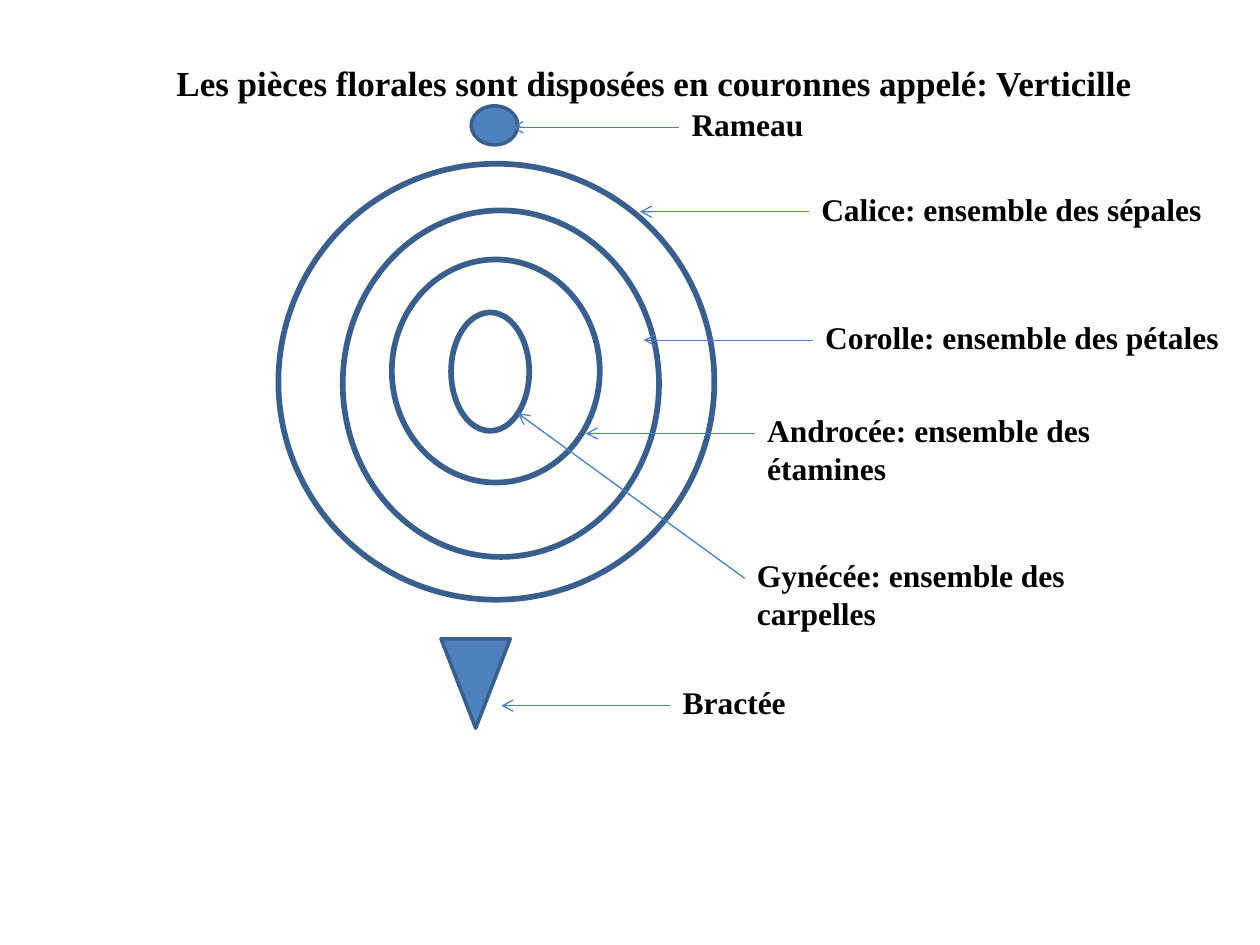
"""Build a slide showing the whorls of a flower as a labelled floral diagram."""
from lxml import etree
from pptx import Presentation
from pptx import util as u
from pptx.dml.color import RGBColor
from pptx.enum import shapes, text
from pptx.oxml.ns import qn

COLORS = {"text": "000000", "fill": "4F81BD", "outline": "3A5F8C", "arrow": "4B7EBC"}
FONT = {"name": "Times New Roman", "bold": True}
FRAME = {"word_wrap": True, "auto_size": text.MSO_AUTO_SIZE.NONE,
         "vertical_anchor": text.MSO_ANCHOR.TOP}
OVAL = shapes.MSO_SHAPE.OVAL
TRIANGLE = shapes.MSO_SHAPE.ISOSCELES_TRIANGLE


def write(sp, content, size, align):
    tf = sp.text_frame
    for key, value in FRAME.items():
        setattr(tf, key, value)
    p = tf.paragraphs[0]
    p.alignment = align
    r = p.add_run()
    r.text = content
    for key, value in {**FONT, "size": u.Pt(size)}.items():
        setattr(r.font, key, value)
    r.font.color.rgb = RGBColor.from_string(COLORS["text"])


def draw(s, kind, box, width, filled, rotation=0):
    sp = s.shapes.add_shape(kind, *map(u.Inches, box))
    sp.shadow.inherit = False
    sp.rotation = rotation
    if filled:
        sp.fill.solid()
        sp.fill.fore_color.rgb = RGBColor.from_string(COLORS["fill"])
    else:
        sp.fill.background()
    sp.line.color.rgb = RGBColor.from_string(COLORS["outline"])
    sp.line.width = u.Pt(width)


prs = Presentation()
prs.slide_width, prs.slide_height = u.Inches(10), u.Inches(7.5)
s = prs.slides.add_slide(prs.slide_layouts[5])

title = s.shapes.title
place = {"left": 1.3, "top": 0.44, "width": 7.95, "height": 0.44}
for key, value in place.items():
    setattr(title, key, u.Inches(value))
write(title, "Les pièces florales sont disposées en couronnes appelé: Verticille",
      20, text.PP_ALIGN.JUSTIFY)

whorls = [
    (2.21, 1.3, 3.46, 3.46),
    (2.72, 1.67, 2.51, 2.75),
    (3.11, 2.06, 1.65, 1.77),
    (3.58, 2.48, 0.62, 0.94),
]
for box in whorls:
    draw(s, OVAL, box, 3.25, False)
draw(s, OVAL, (3.74, 0.84, 0.37, 0.31), 2, True)
draw(s, TRIANGLE, (3.5, 5.07, 0.55, 0.71), 2, True, 180)

labels = [
    ("Rameau", 5.39, 1.01, 3.23, 1, (4.06, 1.01)),
    ("Calice: ensemble des sépales", 6.42, 1.68, 3.23, 1, (5.08, 1.68)),
    ("Corolle: ensemble des pétales", 6.45, 2.7, 3.43, 1, (5.11, 2.7)),
    ("Androcée: ensemble des étamines", 5.99, 3.44, 3.65, 2, (4.65, 3.44)),
    ("Gynécée: ensemble des carpelles", 5.91, 4.59, 3.23, 2, (4.11, 3.28)),
    ("Bractée", 5.32, 5.6, 3.23, 1, (3.98, 5.6)),
]
for content, x, y, width, lines, tip in labels:
    height = 0.45 if lines == 1 else 0.71
    sp = s.shapes.add_textbox(*map(u.Inches, (x, y - 0.225, width, height)))
    write(sp, content, 18, text.PP_ALIGN.LEFT)
    arrow = s.shapes.add_connector(shapes.MSO_CONNECTOR.STRAIGHT,
                                   *map(u.Inches, (x, y, *tip)))
    if lines == 1:
        arrow.begin_connect(sp, 1)
    arrow.line.color.rgb = RGBColor.from_string(COLORS["arrow"])
    arrow.line.width = u.Pt(0.75)
    etree.SubElement(arrow.line._get_or_add_ln(), qn("a:tailEnd"), type="arrow")
    etree.SubElement(arrow._element.spPr, qn("a:effectLst"))

prs.save("out.pptx")
